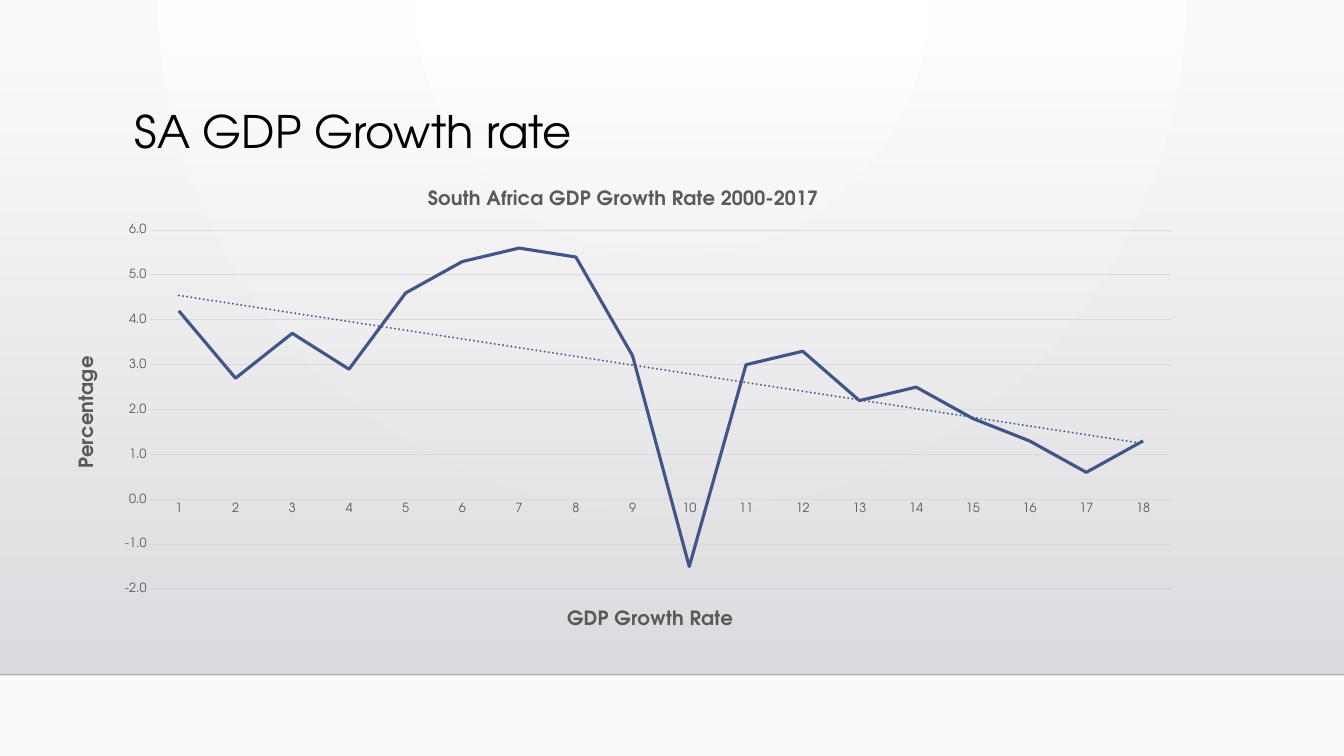
from lxml import etree
from pptx import Presentation
from pptx.chart.data import CategoryChartData
from pptx.dml.color import RGBColor
from pptx.enum.chart import XL_CHART_TYPE as CHART, XL_MARKER_STYLE as MARKER
from pptx.enum.chart import XL_TICK_LABEL_POSITION as LABELS, XL_TICK_MARK as TICK
from pptx.enum.shapes import MSO_CONNECTOR as CONNECTOR, MSO_SHAPE as SHAPE
from pptx.enum.text import MSO_ANCHOR as ANCHOR
from pptx.oxml import parse_xml
from pptx.oxml.ns import nsdecls, qn
from pptx.util import Cm, Pt

COLORS = {
    "title": "000000", "text": "595959", "grid": "D9D9D9", "growth": "415588",
    "floor": "000001", "haze_top": "DCDCE0", "haze_bottom": "DEDEE2",
    "glow": "FFFFFF", "paper": "FAFAFA",
}
FONT = "TeX Gyre Adventor"
WIDTH, HEIGHT = 33.87, 19.05
FLOOR = 17
GROWTH = [4.2, 2.7, 3.7, 2.9, 4.6, 5.3, 5.6, 5.4, 3.2,
          -1.5, 3.0, 3.3, 2.2, 2.5, 1.8, 1.3, 0.6, 1.3]


def rgb(name):
    return RGBColor.from_string(COLORS[name])


def style_font(font, size, color="text", bold=False):
    font.name, font.size, font.bold = FONT, Pt(size), bold
    font.color.rgb = rgb(color)


def write(tf, text, **style):
    """Put one formatted run into a text frame."""
    r = tf.paragraphs[0].add_run()
    r.text = text
    style_font(r.font, **style)


def style_line(line, color, width):
    line.color.rgb = rgb(color)
    line.width = Pt(width)


def add_alpha(parent, percent):
    """Make the colour inside an element partly transparent."""
    color = parent.find(".//" + qn("a:srgbClr"))
    etree.SubElement(color, qn("a:alpha"), val=str(percent * 1000))


def gradient(start, end, direction):
    return parse_xml(
        f'<a:gradFill {nsdecls("a")} rotWithShape="1"><a:gsLst>'
        f'<a:gs pos="0"><a:srgbClr val="{COLORS[start]}"/></a:gs>'
        f'<a:gs pos="100000"><a:srgbClr val="{COLORS[end]}"/></a:gs>'
        f'</a:gsLst>{direction}</a:gradFill>')


def replace_fill(parent, fill):
    parent.replace(parent.find(qn("a:solidFill")), fill)


def place(element, x, y, w=None, h=None):
    """Fix a chart part at fractions of the chart's width and height."""
    old = element.find(qn("c:layout"))
    if old is not None:
        element.remove(old)
    modes = '<c:xMode val="edge"/><c:yMode val="edge"/>'
    size = ""
    if w:
        modes = '<c:layoutTarget val="inner"/>' + modes
        size = f'<c:w val="{w}"/><c:h val="{h}"/>'
    layout = parse_xml(
        f'<c:layout {nsdecls("c")}><c:manualLayout>{modes}'
        f'<c:x val="{x}"/><c:y val="{y}"/>{size}</c:manualLayout></c:layout>')
    tx = element.find(qn("c:tx"))
    element.insert(0 if tx is None else element.index(tx) + 1, layout)


class Deck:
    def __init__(self):
        self.prs = Presentation()
        self.prs.slide_width, self.prs.slide_height = Cm(WIDTH), Cm(HEIGHT)
        self.s = self.prs.slides.add_slide(self.prs.slide_layouts[6])

    def background(self):
        self.s.background.fill.solid()
        bg = self.s.element.find(".//" + qn("p:bgPr"))
        replace_fill(bg, gradient(
            "glow", "paper", '<a:path path="circle"><a:fillToRect '
            'l="43000" t="0" r="43000" b="100000"/></a:path>'))

    def haze(self, top, height):
        sp = self.s.shapes.add_shape(
            SHAPE.RECTANGLE, 0, Cm(top), Cm(WIDTH), Cm(height))
        sp.shadow.inherit = False
        sp.line.fill.background()
        sp.fill.solid()
        fill = gradient("haze_top", "haze_bottom",
                        '<a:lin ang="5400000" scaled="0"/>')
        add_alpha(fill, 0)
        replace_fill(sp.element.spPr, fill)

    def rule(self, y):
        line = self.s.shapes.add_connector(
            CONNECTOR.STRAIGHT, 0, Cm(y), Cm(WIDTH), Cm(y))
        style_line(line.line, "floor", 1)
        sp_pr = line.element.spPr
        add_alpha(sp_pr, 20)
        etree.SubElement(sp_pr, qn("a:effectLst"))

    def text(self, text, x, y, w, h, **style):
        tf = self.s.shapes.add_textbox(Cm(x), Cm(y), Cm(w), Cm(h)).text_frame
        tf.word_wrap = True
        tf.vertical_anchor = ANCHOR.TOP
        tf.paragraphs[0].line_spacing = 0.9
        write(tf, text, **style)

    def line_chart(self, values, x, y, w, h):
        data = CategoryChartData(number_format="0.0")
        data.categories = [str(i) for i in range(1, len(values) + 1)]
        data.add_series("Series 1", values)
        chart = self.s.shapes.add_chart(
            CHART.LINE, Cm(x), Cm(y), Cm(w), Cm(h), data).chart
        style_font(chart.font, 10, "title")
        chart.has_legend = False
        place(chart.plots[0]._element.getparent(), 0.086, 0.126, 0.895, 0.745)

        cat, val = chart.category_axis, chart.value_axis
        for axis in (cat, val):
            axis.major_tick_mark = axis.minor_tick_mark = TICK.NONE
            style_font(axis.tick_labels.font, 9)
        cat.tick_label_position = LABELS.NEXT_TO_AXIS
        style_line(cat.format.line, "grid", 0.75)
        val.minimum_scale, val.maximum_scale, val.major_unit = -2, 6, 1
        val.tick_labels.number_format = "0.0"
        val.tick_labels.number_format_is_linked = False
        val.format.line.fill.background()
        style_line(val.major_gridlines.format.line, "grid", 0.75)

        titles = [
            (chart.chart_title, "South Africa GDP Growth Rate 2000-2017", 0.326, 0.033),
            (cat.axis_title, "GDP Growth Rate", 0.448, 0.905),
            (val.axis_title, "Percentage", 0.018, 0.38),
        ]
        for title, text, left, top in titles:
            write(title.text_frame, text, size=14, bold=True)
            place(title._element, left, top)
        body = val.axis_title._element.find(".//" + qn("a:bodyPr"))
        body.set("rot", "-5400000")
        body.set("vert", "horz")

        series = chart.plots[0].series[0]
        series.smooth = False
        series.marker.style = MARKER.NONE
        style_line(series.format.line, "growth", 2.25)
        self.trend(series)

    def trend(self, series):
        trend = parse_xml(
            f'<c:trendline {nsdecls("c", "a")}><c:spPr><a:ln w="19050" cap="rnd">'
            f'<a:solidFill><a:srgbClr val="{COLORS["growth"]}"/></a:solidFill>'
            '<a:prstDash val="sysDot"/></a:ln></c:spPr>'
            '<c:trendlineType val="linear"/><c:dispRSqr val="0"/>'
            '<c:dispEq val="0"/></c:trendline>')
        series._element.find(qn("c:cat")).addprevious(trend)


def main():
    deck = Deck()
    deck.background()
    deck.haze(1.3, FLOOR - 1.3)
    deck.rule(FLOOR)
    deck.text("SA GDP Growth rate", 3.15, 2.64, 26.67, 2.92, size=32, color="title")
    deck.line_chart(GROWTH, 1.32, 4.27, 28.75, 12.14)
    deck.prs.save("out.pptx")


if __name__ == "__main__":
    main()
